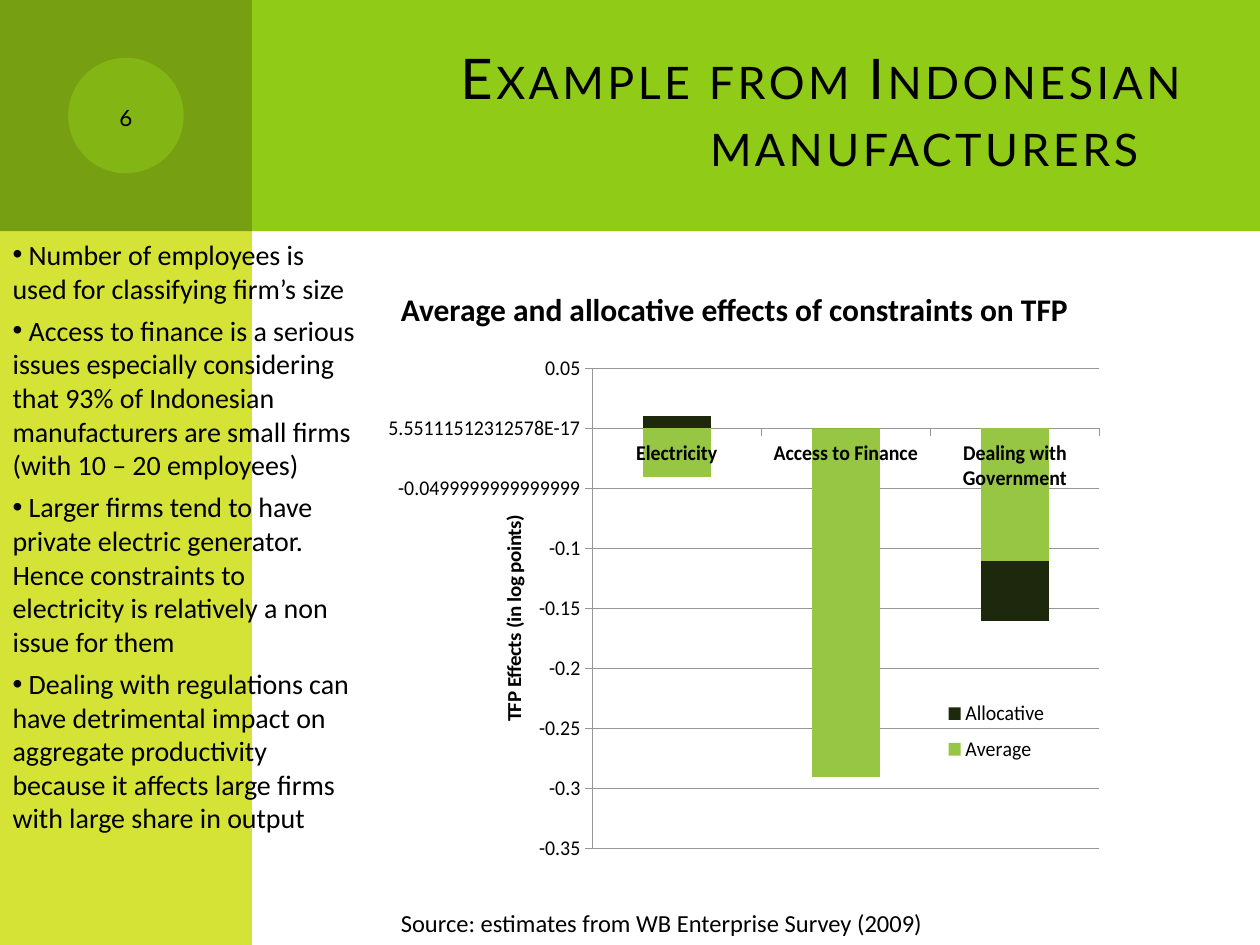
from pptx import Presentation
from pptx import util as u
from pptx.chart import data as cd
from pptx.dml.color import RGBColor
from pptx.enum import chart as ch, shapes as sh, text as tx
from pptx.oxml import parse_xml
from pptx.oxml.ns import nsdecls, qn


class Theme:
    head, side, dark, disc = "8FCB17", "D4E336", "769F11", "83B514"
    ink, grid = "000000", "969696"
    title_font, body_font = "Lato", "Calibri"
    title, sub, body, note, axis = 32, 18, 16, 14, 12


# Content
TITLE = "Example from Indonesian manufacturers"
NUMBER = "6"
POINTS = [
    "Number of employees is used for classifying firm’s size",
    "Access to finance is a serious issues especially considering that 93% of "
    "Indonesian manufacturers are small firms (with 10 – 20 employees)",
    "Larger firms tend to have private electric generator. Hence constraints "
    "to electricity is relatively a non issue for them",
    "Dealing with regulations can have detrimental impact on aggregate "
    "productivity because it affects large firms with large share in output",
]
HEADING = "Average and allocative effects of constraints on TFP"
SOURCE = "Source: estimates from WB Enterprise Survey (2009)"
AXIS = "TFP Effects (in log points)"
CATS = ["Electricity", "Access to Finance", "Dealing with Government"]
SERIES = [
    ("Average", (-0.04, -0.29, -0.11), "97C644"),
    ("Allocative", (0.01, 0, -0.05), "1E280C"),
]

# Layout in cm
WIDE, HIGH = 25.4, 19.05
BAND, SIDE = 4.66, 5.08
LEFT = 7.83
DISC = 2.33
PANELS = [
    (sh.MSO_SHAPE.RECTANGLE, (1.27, 0, WIDE - 1.27, BAND), Theme.head),
    (sh.MSO_SHAPE.RECTANGLE, (0, 0, SIDE, HIGH), Theme.side),
    (sh.MSO_SHAPE.RECTANGLE, (0, 0, SIDE, BAND), Theme.dark),
    (sh.MSO_SHAPE.OVAL, ((SIDE - DISC) / 2, (BAND - DISC) / 2, DISC, DISC), Theme.disc),
]


def color(code):
    return RGBColor.from_string(code)


def box(place):
    return [u.Cm(n) for n in place]


def style(font, size, name=Theme.body_font, bold=False):
    font.size, font.name, font.bold = u.Pt(size), name, bold
    font.color.rgb = color(Theme.ink)


def fit(shape, place):
    shape.left, shape.top, shape.width, shape.height = box(place)
    shape.text_frame.auto_size = tx.MSO_AUTO_SIZE.NONE


def label(slide, words, place, size, bold=False, wrap=True):
    frame = slide.shapes.add_textbox(*box(place)).text_frame
    frame.word_wrap = wrap
    frame.text = words
    style(frame.paragraphs[0].runs[0].font, size, bold=bold)
    return frame


def small_caps(run, gap=0):
    props = run.font._element
    props.set("cap", "small")
    if gap:
        props.set("spc", str(gap * 100))


def pin(node, index, marks):
    """Fix a chart part at given fractions of the chart area."""
    for old in node.findall(qn("c:layout")):
        node.remove(old)
    inner = '<c:layoutTarget val="inner"/>' if index == 0 else ""
    modes = '<c:xMode val="edge"/><c:yMode val="edge"/>'
    sizes = "".join(f'<c:{k} val="{v}"/>' for k, v in zip("xywh", marks))
    node.insert(index, parse_xml(
        f'<c:layout {nsdecls("c")}><c:manualLayout>{inner}{modes}{sizes}'
        "</c:manualLayout></c:layout>"))


def add_graph(slide):
    data = cd.CategoryChartData(number_format="General")
    data.categories = CATS
    for name, vals, _ in SERIES:
        data.add_series(name, vals)
    chart = slide.shapes.add_chart(
        ch.XL_CHART_TYPE.COLUMN_STACKED, *box((LEFT, 6.77, 15.67, 11)), data).chart
    style(chart.font, Theme.axis)
    chart.has_title = False
    plot = chart.plots[0]
    plot.gap_width, plot.overlap, plot.vary_by_categories = 150, 100, False
    for bars, (_, _, fill) in zip(plot.series, SERIES):
        bars.invert_if_negative = False
        bars.format.fill.solid()
        bars.format.fill.fore_color.rgb = color(fill)

    # Axes
    cat, val = chart.category_axis, chart.value_axis
    style(cat.tick_labels.font, Theme.axis, bold=True)
    style(val.tick_labels.font, Theme.axis)
    val.minimum_scale, val.maximum_scale, val.major_unit = -0.35, 0.05, 0.05
    val.has_major_gridlines = True
    for line in (cat.format.line, val.format.line, val.major_gridlines.format.line):
        line.color.rgb = color(Theme.grid)
        line.width = u.Pt(0.75)
    val.has_title = True
    frame = val.axis_title.text_frame
    frame.text = AXIS
    style(frame.paragraphs[0].runs[0].font, Theme.axis, bold=True)

    # Legend and fixed positions
    chart.has_legend = True
    key = chart.legend
    key.position = ch.XL_LEGEND_POSITION.RIGHT
    key.include_in_layout = False
    style(key.font, Theme.axis)
    pin(chart._chartSpace.chart.plotArea, 0, (0.22, 0.06, 0.69, 0.88))
    pin(val.axis_title._element, 1, (0.09, 0.3))
    pin(key._element, 1, (0.68, 0.65, 0.18, 0.15))


def main():
    deck = Presentation()
    deck.slide_width, deck.slide_height = u.Cm(WIDE), u.Cm(HIGH)
    slide = deck.slides.add_slide(deck.slide_layouts[1])
    title, body = slide.placeholders

    # Coloured panels
    for kind, place, fill in PANELS:
        panel = slide.shapes.add_shape(kind, *box(place))
        panel.shadow.inherit = False
        panel.fill.solid()
        panel.fill.fore_color.rgb = color(fill)
        panel.line.fill.background()

    # Title, above the panels
    slide.shapes._spTree.append(title._element)
    fit(title, (6.77, 0.64, 17.36, 3.18))
    title.text_frame.text = TITLE
    title.text_frame.vertical_anchor = tx.MSO_ANCHOR.MIDDLE
    para = title.text_frame.paragraphs[0]
    para.alignment = tx.PP_ALIGN.RIGHT
    style(para.runs[0].font, Theme.title, Theme.title_font)
    small_caps(para.runs[0], 2)

    # Slide number
    frame = label(slide, NUMBER, (1.48, 1.48, 2.12, 1.69), Theme.body)
    frame.vertical_anchor = tx.MSO_ANCHOR.MIDDLE
    para = frame.paragraphs[0]
    para.alignment = tx.PP_ALIGN.CENTER
    para.runs[0].font.name = Theme.title_font
    small_caps(para.runs[0])

    # Chart with heading and source
    add_graph(slide)
    label(slide, HEADING, (LEFT, 5.72, 14.1, 1.03), Theme.sub, bold=True)
    label(slide, SOURCE, (LEFT, 18.19, 11.13, 0.86), Theme.note, wrap=False)

    # Bulleted list
    slide.shapes._spTree.append(body._element)
    fit(body, (0, BAND, 7.41, 13.97))
    frame = body.text_frame
    frame.text = "\n".join(" " + point for point in POINTS)
    for para in frame.paragraphs:
        para.space_before, para.space_after = u.Pt(0), u.Pt(5)
        props = para._p.get_or_add_pPr()
        props.set("marL", "0")
        props.set("indent", "0")
        style(para.runs[0].font, Theme.body)

    deck.save("out.pptx")


if __name__ == "__main__":
    main()
